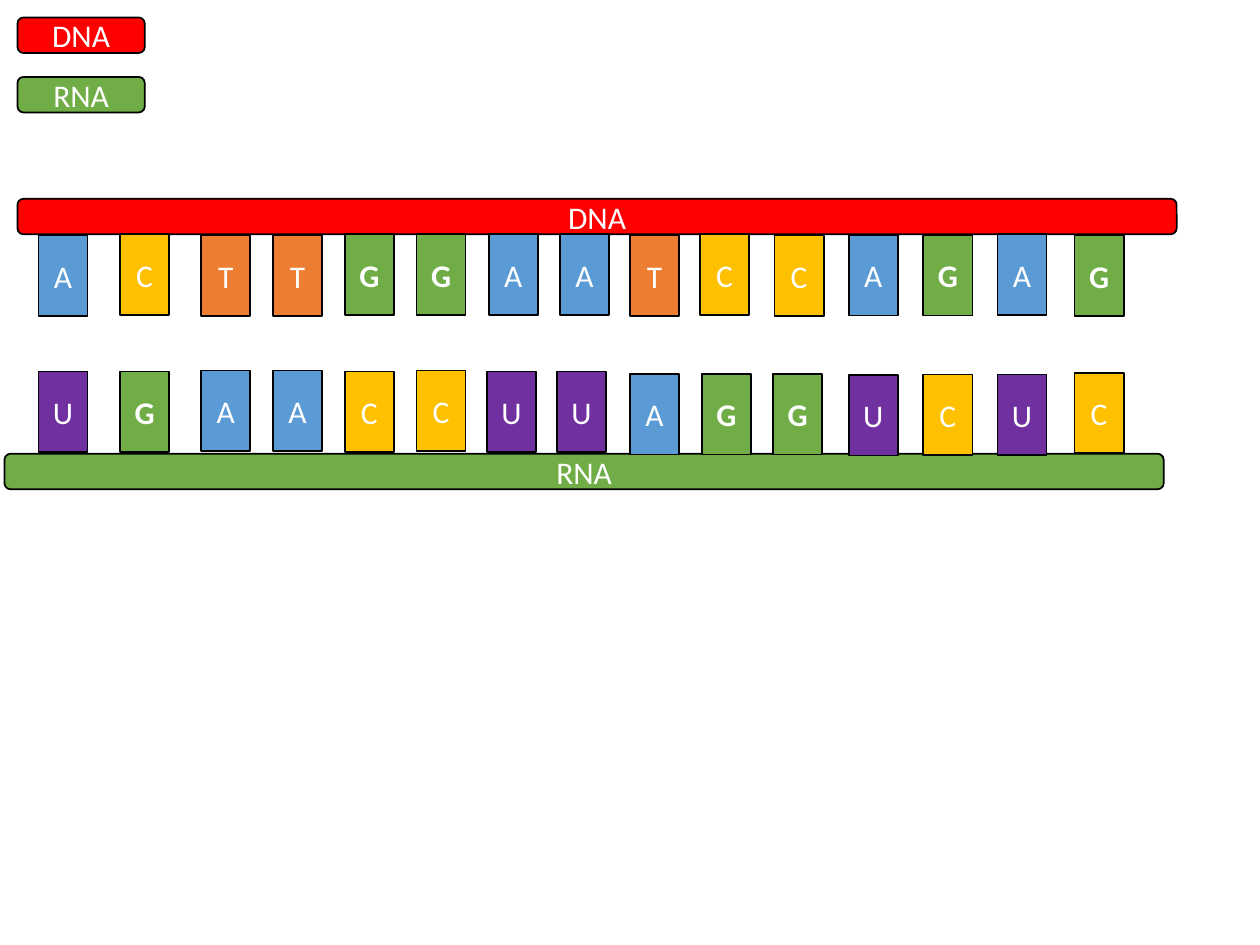
import pptx
import pptx.util
import pptx.dml.color
import pptx.enum.shapes
import pptx.enum.text

Pt = pptx.util.Pt
SHAPES = pptx.enum.shapes.MSO_SHAPE

DNA_RED = "FF0000"
RNA_GREEN = "70AD47"
BASE_COLORS = {"A": "5B9BD5", "C": "FFC000", "G": "70AD47", "T": "ED7D31", "U": "7030A0"}
BACKBONE_HEIGHT = 20.3
BACKBONE_WIDTH = 662.4
BASE_WIDTH, BASE_HEIGHT = 28.1, 46.1


def rgb(value):
    """Turn a hex string into a colour."""
    return pptx.dml.color.RGBColor.from_string(value)


def add_label(slide, kind, left, top, width, height, text, fill, bold=False):
    """Place an outlined block with centred white text."""
    block = slide.shapes.add_shape(kind, Pt(left), Pt(top), Pt(width), Pt(height))
    block.shadow.inherit = False
    block.fill.solid()
    block.fill.fore_color.rgb = rgb(fill)
    block.line.color.rgb = rgb("000000")
    block.line.width = Pt(1)
    block.text_frame.vertical_anchor = pptx.enum.text.MSO_ANCHOR.MIDDLE
    label = block.text_frame.paragraphs[0]
    label.text = text
    label.alignment = pptx.enum.text.PP_ALIGN.CENTER
    label.font.name = "Calibri"
    label.font.size = Pt(18)
    label.font.bold = bold
    label.font.color.rgb = rgb("FFFFFF")


def add_legend(slide, left, top):
    """Stack the two strand keys."""
    for row, (name, color) in enumerate((("DNA", DNA_RED), ("RNA", RNA_GREEN))):
        add_label(slide, SHAPES.ROUNDED_RECTANGLE, left, top + row * 34, 72.7,
                  BACKBONE_HEIGHT, name, color)


def add_strand(slide, left, top, name, color, bases, base_lefts, base_tops):
    """Place a backbone and its bases, offset from the backbone's corner."""
    add_label(slide, SHAPES.ROUNDED_RECTANGLE, left, top, BACKBONE_WIDTH,
              BACKBONE_HEIGHT, name, color)
    for base, base_left, base_top in zip(bases, base_lefts, base_tops):
        add_label(slide, SHAPES.RECTANGLE, left + base_left, top + base_top,
                  BASE_WIDTH, BASE_HEIGHT, base, BASE_COLORS[base], base == "G")


def main():
    """Build the transcription slide."""
    deck = pptx.Presentation()
    deck.slide_width, deck.slide_height = Pt(720), Pt(540)
    slide = deck.slides.add_slide(deck.slide_layouts[6])

    add_legend(slide, 10, 10)
    add_strand(
        slide, 10, 113.6, "DNA", DNA_RED, "ACTTGGAATCCAGAG",
        (12, 58.5, 105, 146, 187, 228, 269.3, 310, 350, 390, 432.6, 475, 517.6, 560, 604),
        (21, 20.3, 21, 21, 20.3, 20.3, 20.3, 20.3, 21, 20.3, 21, 20.7, 20.7, 20.3, 21))
    add_strand(
        slide, 2.6, 259.3, "RNA", RNA_GREEN, "UGAACCUUAGGUCUC",
        (19.4, 66, 112.4, 153.4, 194.4, 235.4, 275.6, 315.6, 357.4, 398.4, 439.2, 482.4,
         525, 567.4, 611.4),
        (-47, -47, -47.5, -47.5, -47, -47.5, -47, -47, -45.6, -45.6, -45.6, -45,
         -45.3, -45.3, -46.3))

    deck.save("out.pptx")


if __name__ == "__main__":
    main()
